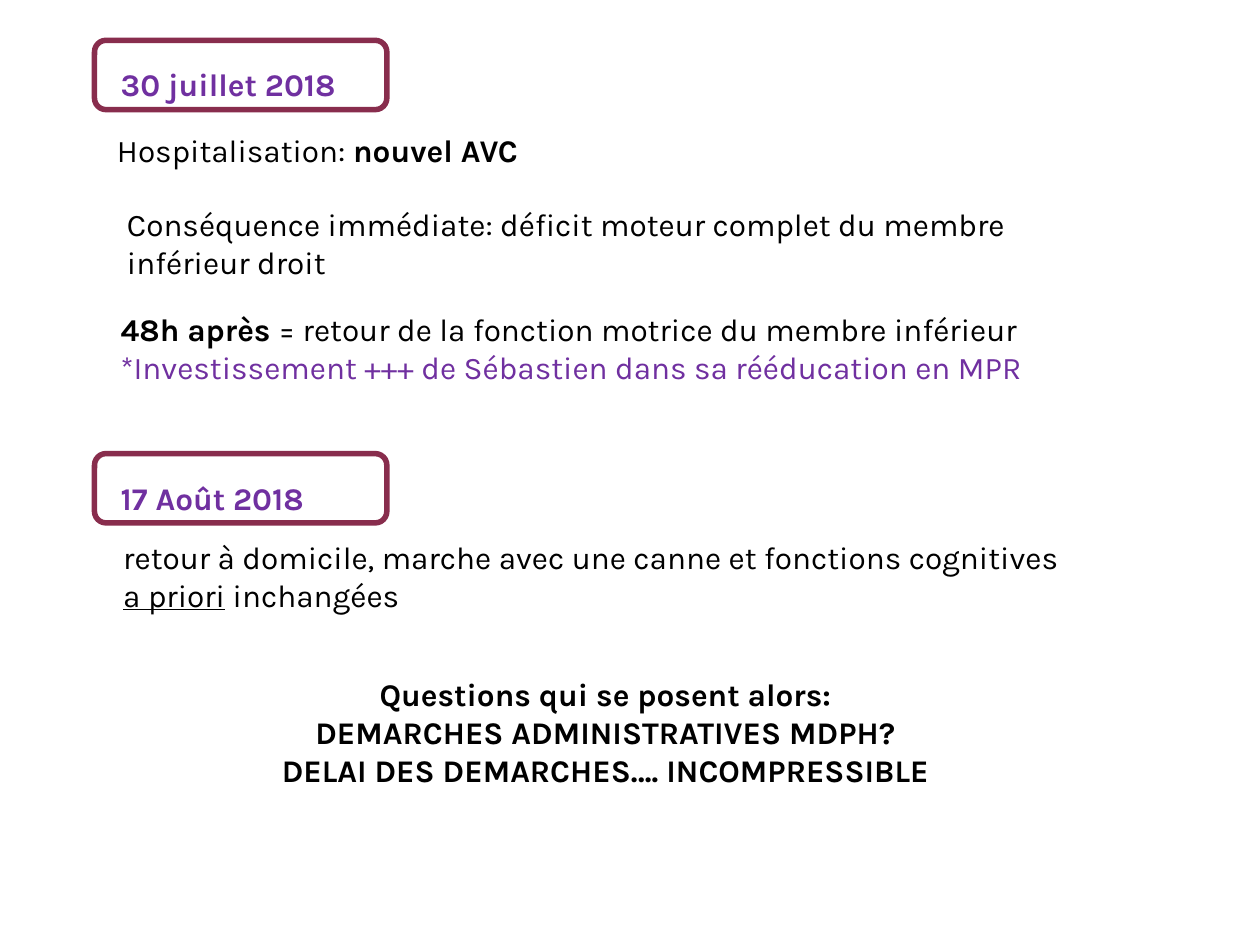
"""Build a slide on the two key dates of a patient's second stroke."""
from dataclasses import dataclass

from pptx import Presentation
from pptx.dml.color import RGBColor
from pptx.enum.shapes import MSO_SHAPE
from pptx.enum.text import MSO_AUTO_SIZE, PP_ALIGN
from pptx.shapes.shapetree import GroupShapes, SlideShapes
from pptx.util import Inches, Pt

ROUNDED = MSO_SHAPE.ROUNDED_RECTANGLE
FIT_TEXT = MSO_AUTO_SIZE.SHAPE_TO_FIT_TEXT
LEFT, CENTER = PP_ALIGN.LEFT, PP_ALIGN.CENTER
SLIDE_WIDTH, SLIDE_HEIGHT = Inches(10), Inches(7.5)
COLUMNS, ROWS = 100, 75
BLANK_LAYOUT = 6


@dataclass(frozen=True)
class Theme:
    """Colours and type sizes of the slide."""
    text: RGBColor = RGBColor(0, 0, 0)
    accent: RGBColor = RGBColor(0x70, 0x30, 0xA0)
    frame: RGBColor = RGBColor(0x88, 0x2D, 0x4D)
    font: str = "Karla"
    size: float = 18
    frame_width: float = 3.15


THEME = Theme()


@dataclass(frozen=True)
class Area:
    """A rectangle in grid columns and rows."""
    column: float
    row: float
    columns: float
    rows: float

    def lengths(self) -> tuple[int, int, int, int]:
        """Return left, top, width and height on the slide."""
        cell_width, cell_height = SLIDE_WIDTH / COLUMNS, SLIDE_HEIGHT / ROWS
        return (round(self.column * cell_width), round(self.row * cell_height),
                round(self.columns * cell_width), round(self.rows * cell_height))


@dataclass(frozen=True)
class Span:
    """A stretch of text that may stand out from its line."""
    text: str
    bold: bool | None = None
    underline: bool | None = None


@dataclass(frozen=True)
class Line:
    """A paragraph with its shared colour and weight."""
    spans: tuple[Span, ...]
    color: RGBColor = THEME.text
    bold: bool = False


@dataclass(frozen=True)
class Note:
    """A text box and its paragraphs."""
    area: Area
    lines: tuple[Line, ...]
    alignment: PP_ALIGN = LEFT


@dataclass(frozen=True)
class Event:
    """A framed date followed by notes."""
    date: str
    row: float
    notes: tuple[Note, ...]


EVENTS = (
    Event("30 juillet 2018", 3.2, (
        Note(Area(8.3, 9.9, 60.9, 4), (
            Line((Span("Hospitalisation: "), Span("nouvel AVC", bold=True))),)),
        Note(Area(9.1, 15.8, 79.3, 7.1), (
            Line((Span("Conséquence immédiate: déficit moteur complet du membre "
                       "inférieur droit"),)),)),
        Note(Area(8.6, 24.1, 80.4, 7.1), (
            Line((Span("48h après ", bold=True),
                  Span("= retour de la fonction motrice du membre inférieur"))),
            Line((Span("*Investissement +++ de Sébastien dans sa rééducation en MPR"),),
                 THEME.accent))),
    )),
    Event("17 Août 2018", 36, (
        Note(Area(8.8, 42.2, 77.3, 7.1), (
            Line((Span("retour à domicile, marche avec une canne et fonctions cognitives "),
                  Span("a priori", underline=True), Span(" inchangées"))),)),
    )),
)
QUESTIONS = Note(Area(21.1, 53.1, 53.9, 10.1), tuple(
    Line((Span(text),), bold=True) for text in (
        "Questions qui se posent alors:",
        "DEMARCHES ADMINISTRATIVES MDPH?",
        "DELAI DES DEMARCHES…. INCOMPRESSIBLE",
    )), CENTER)


def draw_note(shapes: SlideShapes | GroupShapes, note: Note) -> None:
    """Draw a wrapped text box with its paragraphs."""
    text_frame = shapes.add_textbox(*note.area.lengths()).text_frame
    text_frame.word_wrap = True
    text_frame.auto_size = FIT_TEXT
    for index, line in enumerate(note.lines):
        paragraph = text_frame.add_paragraph() if index else text_frame.paragraphs[0]
        paragraph.alignment = note.alignment
        paragraph.font.name = THEME.font
        paragraph.font.size = Pt(THEME.size)
        paragraph.font.color.rgb = line.color
        paragraph.font.bold = line.bold
        for span in line.spans:
            run = paragraph.add_run()
            run.text = span.text
            run.font.bold = span.bold
            run.font.underline = span.underline


def draw_frame(shapes: GroupShapes, area: Area) -> None:
    """Draw the rounded outline around a date."""
    shape = shapes.add_shape(ROUNDED, *area.lengths())
    shape.shadow.inherit = False
    shape.fill.background()
    shape.line.color.rgb = THEME.frame
    shape.line.width = Pt(THEME.frame_width)


def draw_event(shapes: SlideShapes, event: Event) -> None:
    """Draw one group holding a framed date and its notes."""
    group = shapes.add_group_shape()
    for note in reversed(event.notes):
        draw_note(group.shapes, note)
    date = Line((Span(event.date),), THEME.accent, bold=True)
    draw_note(group.shapes, Note(Area(8.6, event.row + 1.5, 46.9, 4), (date,)))
    draw_frame(group.shapes, Area(7.5, event.row, 23.2, 5.5))


def main() -> None:
    """Build and save the presentation."""
    presentation = Presentation()
    presentation.slide_width, presentation.slide_height = SLIDE_WIDTH, SLIDE_HEIGHT
    slide = presentation.slides.add_slide(presentation.slide_layouts[BLANK_LAYOUT])
    draw_note(slide.shapes, QUESTIONS)
    for event in EVENTS:
        draw_event(slide.shapes, event)
    presentation.save("out.pptx")


if __name__ == "__main__":
    main()
